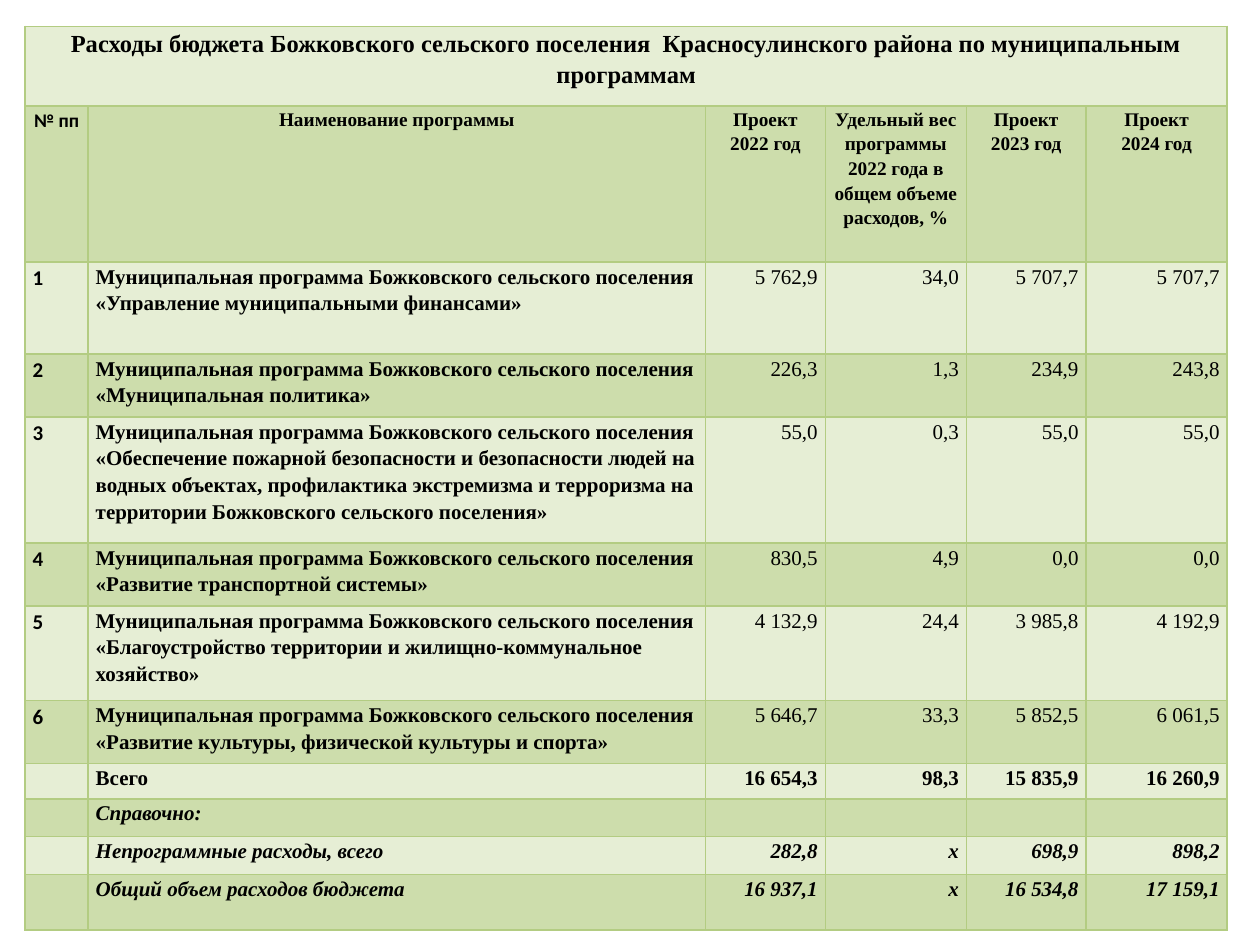
from pptx import Presentation
from pptx import util as u
from pptx.dml.color import RGBColor
from pptx.enum import text
from pptx.oxml.ns import qn
from lxml import etree

COLORS = {"light": "E6EED5", "dark": "CDDDAC", "border": "B3CC82", "ink": "000000"}
SERIF, SANS = "Times New Roman", "Calibri"
LEFT, CENTER, RIGHT = text.PP_ALIGN.LEFT, text.PP_ALIGN.CENTER, text.PP_ALIGN.RIGHT

COLUMN_WIDTHS = [0.5, 4.9, 0.95, 1.12, 0.95, 1.12]
ROW_HEIGHTS = [0.63, 1.24, 0.73, 0.5, 1, 0.5, 0.75, 0.5, 0.28, 0.3, 0.3, 0.44]

HEADING = ("Расходы бюджета Божковского сельского поселения  "
           "Красносулинского района по муниципальным программам")
COLUMN_TITLES = [
    "№ пп", "Наименование программы", "Проект\n2022 год",
    "Удельный вес программы 2022 года в общем объеме расходов, %",
    "Проект\n2023 год", "Проект\n2024 год",
]
PROGRAMS = [
    ("Управление муниципальными финансами", "5 762,9", "34,0", "5 707,7", "5 707,7"),
    ("Муниципальная политика", "226,3", "1,3", "234,9", "243,8"),
    ("Обеспечение пожарной безопасности и безопасности людей на водных объектах, "
     "профилактика экстремизма и терроризма на территории Божковского сельского поселения",
     "55,0", "0,3", "55,0", "55,0"),
    ("Развитие транспортной системы", "830,5", "4,9", "0,0", "0,0"),
    ("Благоустройство территории и жилищно-коммунальное хозяйство",
     "4 132,9", "24,4", "3 985,8", "4 192,9"),
    ("Развитие культуры, физической культуры и спорта",
     "5 646,7", "33,3", "5 852,5", "6 061,5"),
]
TOTAL = ["", "Всего", "16 654,3", "98,3", "15 835,9", "16 260,9"]
REFERENCE = [
    ["", "Справочно:", "", "", "", ""],
    ["", "Непрограммные расходы, всего", "282,8", "х", "698,9", "898,2"],
    ["", "Общий объем расходов бюджета", "16 937,1", "х", "16 534,8", "17 159,1"],
]


class BudgetSlide:
    def __init__(self, slide):
        self.slide = slide

    def table(self, left, top, widths, heights):
        frame = self.slide.shapes.add_table(
            len(heights), len(widths), u.Inches(left), u.Inches(top),
            u.Inches(sum(widths)), u.Inches(sum(heights)))
        grid = frame.table
        grid.first_row = grid.horz_banding = False
        for column, width in zip(grid.columns, widths):
            column.width = u.Inches(width)
        for row, height in zip(grid.rows, heights):
            row.height = u.Inches(height)
        return grid

    def border(self, cell):
        properties = cell._tc.get_or_add_tcPr()
        for position, side in enumerate(("lnL", "lnR", "lnT", "lnB")):
            line = etree.Element(qn(f"a:{side}"), w=str(u.Pt(1)))
            fill = etree.SubElement(line, qn("a:solidFill"))
            etree.SubElement(fill, qn("a:srgbClr"), val=COLORS["border"])
            properties.insert(position, line)

    def cell(self, cell, wording, fill, align, size=12, font=SERIF, bold=True, italic=False):
        cell.fill.solid()
        cell.fill.fore_color.rgb = RGBColor.from_string(COLORS[fill])
        cell.margin_left = cell.margin_right = u.Inches(0.06)
        cell.margin_top = cell.margin_bottom = 0
        self.border(cell)
        cell.text_frame.text = wording
        for paragraph in cell.text_frame.paragraphs:
            paragraph.alignment = align
            paragraph.line_spacing = 1.15
            paragraph.font.name = font
            paragraph.font.size = u.Pt(size)
            paragraph.font.bold = bold
            paragraph.font.italic = italic
            paragraph.font.color.rgb = RGBColor.from_string(COLORS["ink"])
            if not wording:
                etree.SubElement(paragraph._p, qn("a:endParaRPr"), sz=str(size * 100))

    def row(self, grid, index, wordings, aligns, fonts, bolds, size=12, italic=False):
        fill = "dark" if index % 2 else "light"
        for column, wording in enumerate(wordings):
            self.cell(grid.cell(index, column), wording, fill, aligns[column],
                      size, fonts[column], bolds[column], italic)


def main():
    deck = Presentation()
    deck.slide_width, deck.slide_height = u.Inches(10), u.Inches(7.5)
    budget = BudgetSlide(deck.slides.add_slide(deck.slide_layouts[6]))
    grid = budget.table(0.2, 0.21, COLUMN_WIDTHS, ROW_HEIGHTS)

    fonts = [SANS] + [SERIF] * 5
    aligns = [LEFT] * 2 + [RIGHT] * 4
    all_bold = [True] * 6
    names_bold = [True] * 2 + [False] * 4

    budget.row(grid, 0, [HEADING] + [""] * 5, [CENTER] * 6, [SERIF] * 6, all_bold, size=14)
    grid.cell(0, 0).merge(grid.cell(0, 5))
    budget.row(grid, 1, COLUMN_TITLES, [CENTER] * 6, fonts, all_bold, size=11)
    for number, (name, *amounts) in enumerate(PROGRAMS, 1):
        title = f"Муниципальная программа Божковского сельского поселения «{name}»"
        budget.row(grid, number + 1, [str(number), title, *amounts], aligns, fonts, names_bold)
    budget.row(grid, 8, TOTAL, aligns, fonts, all_bold)
    for index, wordings in enumerate(REFERENCE, 9):
        budget.row(grid, index, wordings, aligns, fonts, all_bold, italic=True)

    deck.save("out.pptx")


if __name__ == "__main__":
    main()
